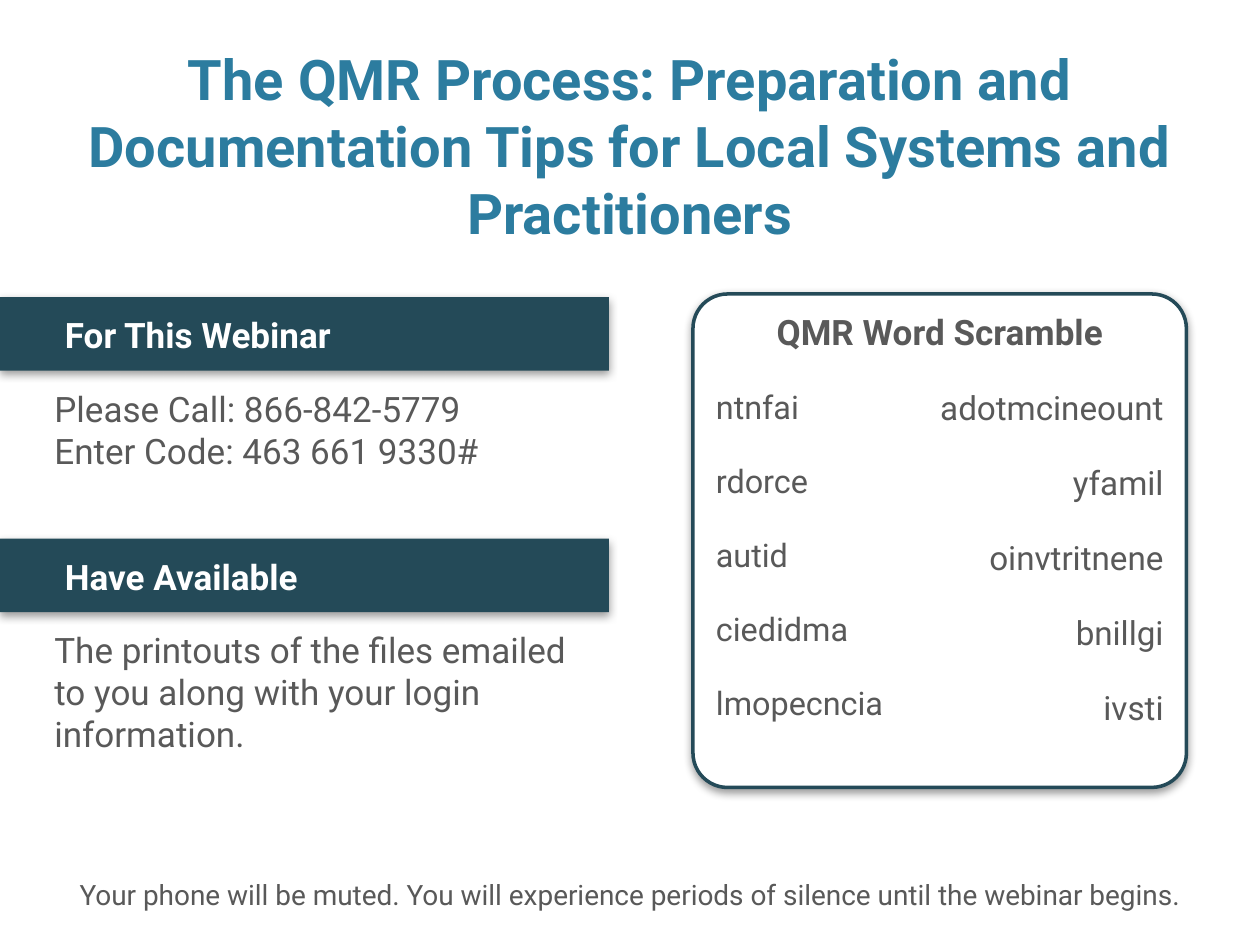
from dataclasses import dataclass

from lxml import etree
from pptx import Presentation
from pptx.dml.color import RGBColor
from pptx.enum.shapes import MSO_SHAPE
from pptx.enum.text import MSO_ANCHOR, PP_ALIGN
from pptx.oxml.ns import qn
from pptx.util import Inches, Pt

RECT, ROUNDED = MSO_SHAPE.RECTANGLE, MSO_SHAPE.ROUNDED_RECTANGLE
LEFT, CENTER, RIGHT = PP_ALIGN.LEFT, PP_ALIGN.CENTER, PP_ALIGN.RIGHT
TOP, BOTTOM = MSO_ANCHOR.TOP, MSO_ANCHOR.BOTTOM

TEAL = RGBColor(0x2C, 0x7C, 0x9F)
DARK = RGBColor(0x24, 0x4A, 0x58)
GRAY = RGBColor(0x59, 0x59, 0x59)
WHITE = RGBColor(0xFF, 0xFF, 0xFF)

FONT = "Roboto"
UNIT = Inches(1) / 12
COLS, ROWS = 120, 90
BAR_W, BAR_H = 58, 7


@dataclass(frozen=True)
class Box:
    col: float
    row: float
    cols: float
    rows: float

    def emu(self) -> list[int]:
        return [round(n * UNIT) for n in (self.col, self.row, self.cols, self.rows)]


@dataclass(frozen=True)
class Section:
    row: float
    heading: str
    heading_cols: float
    body: str
    body_cols: float
    body_rows: float
    after: float


@dataclass(frozen=True)
class WordColumn:
    box: Box
    words: tuple[str, ...]
    size: float
    align: PP_ALIGN


SECTIONS = (
    Section(28.3, "For This Webinar", 48,
            "Please Call: 866-842-5779\vEnter Code: 463 661 9330#", 49, 12, 6),
    Section(51.3, "Have Available", 57,
            "The printouts of the files emailed to you along with your login information.",
            54, 15, 0),
)

WORD_COLUMNS = (
    WordColumn(Box(67, 36.3, 21, 34),
               ("ntnfai", "rdorce", "autid", "ciedidma", "lmopecncia"), 18.5, LEFT),
    WordColumn(Box(86, 36.3, 26, 34),
               ("adotmcineount", "yfamil", "oinvtritnene", "bnillgi", "ivsti"), 19, RIGHT),
)


def add_text(s, box: Box, *paragraphs: str, size: float = 20, color: RGBColor = GRAY,
             bold: bool = False, align: PP_ALIGN = LEFT, anchor: MSO_ANCHOR = TOP,
             before: float = 20, after: float = 0) -> None:
    tf = s.shapes.add_textbox(*box.emu()).text_frame
    tf.word_wrap = True
    tf.vertical_anchor = anchor
    tf.text = "\n".join(paragraphs)
    for p in tf.paragraphs:
        p.alignment = align
        p.space_before, p.space_after = Pt(before), Pt(after)
        for r in p.runs:
            r.font.name, r.font.size = FONT, Pt(size)
            r.font.bold = bold
            r.font.color.rgb = color


def add_shadow(sp) -> None:
    sp.shadow.inherit = False
    effects = sp._element.spPr.find(qn("a:effectLst"))
    outer = etree.SubElement(effects, qn("a:outerShdw"), blurRad=str(Pt(5)),
                             dist=str(Pt(2)), dir="5400000", rotWithShape="0")
    color = etree.SubElement(outer, qn("a:srgbClr"), val="000000")
    etree.SubElement(color, qn("a:alpha"), val="40000")


def add_panel(s, kind: MSO_SHAPE, box: Box, fill: RGBColor,
              line: RGBColor | None = None, radius: float | None = None) -> None:
    sp = s.shapes.add_shape(kind, *box.emu())
    sp.fill.solid()
    sp.fill.fore_color.rgb = fill
    if line is None:
        sp.line.fill.background()
    else:
        sp.line.color.rgb = line
        sp.line.width = Pt(2)
    if radius is not None:
        sp.adjustments[0] = radius
    add_shadow(sp)


def add_section(s, section: Section) -> None:
    add_panel(s, RECT, Box(0, section.row, BAR_W, BAR_H), DARK)
    add_text(s, Box(5, section.row + 1, section.heading_cols, BAR_H), section.heading,
             color=WHITE, bold=True, after=6)
    add_text(s, Box(4, section.row + 8, section.body_cols, section.body_rows),
             section.body, after=section.after)


def main() -> None:
    prs = Presentation()
    prs.slide_width, prs.slide_height = round(COLS * UNIT), round(ROWS * UNIT)
    s = prs.slides.add_slide(prs.slide_layouts[6])

    add_text(s, Box(7.2, 3, 105.6, 21),
             "The QMR Process: Preparation and Documentation Tips "
             "for Local Systems and Practitioners",
             size=32, color=TEAL, bold=True, align=CENTER, anchor=BOTTOM, before=0)
    for section in SECTIONS:
        add_section(s, section)

    add_panel(s, ROUNDED, Box(66, 28, 47, 47), WHITE, line=DARK, radius=0.07)
    add_text(s, Box(67, 29, 45, 7), "QMR Word Scramble", bold=True, align=CENTER, after=6)
    for column in WORD_COLUMNS:
        add_text(s, column.box, *column.words, size=column.size, align=column.align)

    add_text(s, Box(0, 83, COLS, 6),
             "Your phone will be muted. You will experience periods of silence "
             "until the webinar begins.", size=16, align=CENTER)
    prs.save("out.pptx")


if __name__ == "__main__":
    main()
